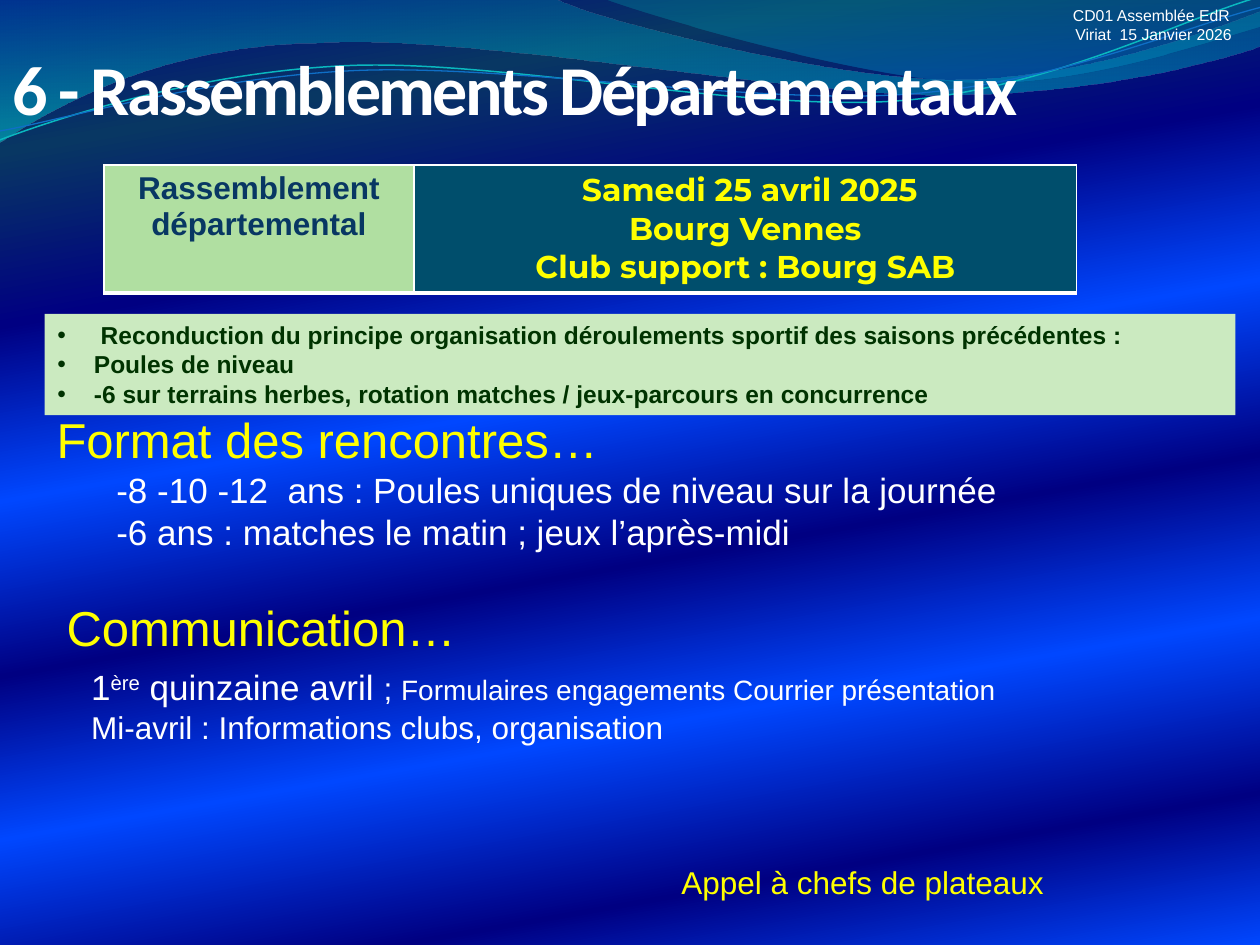
import math

import pptx
import pptx.util
import pptx.dml.color
import pptx.enum.text
import pptx.oxml.ns
import lxml.etree

Pt = pptx.util.Pt
RGB = pptx.dml.color.RGBColor.from_string
qn = pptx.oxml.ns.qn
ALIGN = pptx.enum.text.PP_ALIGN
ANCHOR = pptx.enum.text.MSO_ANCHOR

THEME = {
    "font": "Arial", "title_font": "Calibri", "event_font": "Montserrat",
    "white": "FFFFFF", "yellow": "FFFF00", "navy": "083763", "forest": "003300",
    "label_fill": "B0DFA1", "event_fill": "004E6C", "list_fill": "CBEAC0",
    "teal": "0AB8BF", "blue": "0F6FC6",
    "title": 40, "heading": 28, "body": 20, "detail": 18, "small": 16, "list": 14, "note": 9,
    "background": [(0, "000082", 100), (13, "083763", 100), (28, "000082", 100),
                   (43, "0047FF", 100), (58, "000082", 100), (72, "0047FF", 100),
                   (87, "000082", 100), (100, "0047FF", 100)],
    "wide_wave": [(0, "0074A1", 45), (100, "00C6CF", 55)],
    "right_wave": [(0, "00A1A9", 30), (80, "008BBF", 45)],
}


def paint_gradient(fill, holder, stops, angle):
    """Fill with (position %, colour, opacity %) stops, the angle turning clockwise."""
    fill.gradient()
    gradient = next(holder.iter(qn("a:gradFill")))
    stop_list = gradient.find(qn("a:gsLst"))
    for old_stop in list(stop_list):
        stop_list.remove(old_stop)
    for position, color, opacity in stops:
        stop = lxml.etree.SubElement(stop_list, qn("a:gs"), pos=str(position * 1000))
        value = lxml.etree.SubElement(stop, qn("a:srgbClr"), val=color)
        if opacity < 100:
            lxml.etree.SubElement(value, qn("a:alpha"), val=str(opacity * 1000))
    gradient.find(qn("a:lin")).set("ang", str(angle * 60000))


def write(frame, paragraphs, size, color, font="font", bold=False, align=ALIGN.LEFT):
    """Write paragraphs, each a list of (text, theme size or None, baseline %) runs or one string."""
    frame.word_wrap = True
    for number, runs in enumerate(paragraphs):
        paragraph = frame.add_paragraph() if number else frame.paragraphs[0]
        paragraph.alignment = align
        paragraph.space_before = Pt(0)
        if isinstance(runs, str):
            runs = [(runs, None, 0)]
        for text, run_size, baseline in runs:
            run = paragraph.add_run()
            run.text = text
            run.font.name = THEME[font]
            run.font.size = Pt(THEME[run_size or size])
            run.font.bold = bold
            run.font.color.rgb = RGB(THEME[color])
            if baseline:
                run.font._element.set("baseline", str(baseline * 1000))


presentation = pptx.Presentation()
presentation.slide_width = pptx.util.Inches(10)
presentation.slide_height = pptx.util.Inches(7.5)
column = presentation.slide_width // 100
row = presentation.slide_height // 75
slide = presentation.slides.add_slide(presentation.slide_layouts[1])
shapes = slide.shapes
paint_gradient(slide.background.fill, slide._element, THEME["background"], 80)

# Waves: start point, straight (x, y) or cubic (x1, y1, x2, y2, x, y) segments,
# gradient, line colour and width, tilt in degrees with its centre
waves = [
    ((0, -0.1), [(44, -0.1), (47.6, 1.7, 66.4, 6.3, 75.8, 6.3), (85.3, 6.3, 95.8, 2.6, 100, 0.9),
                 (100.1, 3.6), (98.3, 4.4, 87, 7.6, 74.6, 7.5), (62.2, 7.5, 38.2, 2.8, 25.7, 3.4),
                 (12.9, 3.5, 4.6, 8.3, -0.1, 11.3)], "wide_wave", None, 0, (0, 0)),
    ((47.9, -0.1), [(50.9, 1.1, 68.2, 6.2, 76.9, 6.5), (85.6, 6.9, 96.1, 3.2, 100, 2.1),
                    (100, 0)], "right_wave", None, 0, (0, 0)),
    ((0, 11.1), [(4.8, 9.3, 15.8, 5.7, 27.7, 5.2), (39.5, 4.7, 59.3, 8.9, 71.3, 8),
                 (83.3, 7.1, 93.8, 1.5, 99.8, -0.2)], None, ("teal", 0.85), -2.7, (49.9, 5.75)),
    ((0, 10.4), [(4.7, 9.6, 16.4, 6.1, 28.3, 5.6), (40.3, 5.1, 59.7, 8.3, 71.7, 7.5),
                 (83.6, 6.7, 94.1, 2.1, 100, 0.6)], None, ("blue", 0.75), -2.7, (50, 5.9)),
]
for start, segments, stops, line, tilt, (center_x, center_y) in waves:
    points = [start]
    for segment in segments:
        points += zip(segment[::2], segment[1::2])
    cosine, sine = math.cos(math.radians(-tilt)), math.sin(math.radians(-tilt))
    outline = []
    for x, y in points:
        across, down = x - center_x, y - center_y
        outline.append((round((center_x + across * cosine - down * sine) * column),
                        round((center_y + across * sine + down * cosine) * row)))
    builder = shapes.build_freeform(*outline[0], scale=1.0)
    builder.add_line_segments(outline[1:], close=stops is not None)
    wave = builder.convert_to_shape()
    # Join each three control points into one curve
    straight = iter(list(wave._element.iter(qn("a:lnTo"))))
    for segment in segments:
        step = next(straight)
        if len(segment) == 6:
            step.tag = qn("a:cubicBezTo")
            for _ in range(2):
                other = next(straight)
                step.append(other[0])
                other.getparent().remove(other)
    wave.rotation = tilt
    wave.shadow.inherit = False
    if stops:
        paint_gradient(wave.fill, wave._element, THEME[stops], 90)
        wave.line.fill.background()
    else:
        wave.fill.background()
        wave.line.color.rgb = RGB(THEME[line[0]])
        wave.line.width = Pt(line[1])

# Title and list stand in front of the waves
title, principles = shapes.title, slide.placeholders[1]
for placeholder, (left, top, width, height), anchor in (
        (title, (0, 2.1, 85, 8.7), ANCHOR.BOTTOM),
        (principles, (3.55, 24.9, 94.5, 8.05), ANCHOR.TOP)):
    shapes._spTree.append(placeholder._element)
    placeholder.left, placeholder.width = round(left * column), round(width * column)
    placeholder.top, placeholder.height = round(top * row), round(height * row)
    placeholder.text_frame.auto_size = pptx.enum.text.MSO_AUTO_SIZE.NONE
    placeholder.text_frame.vertical_anchor = anchor

write(title.text_frame, ["6 - Rassemblements Départementaux"], "title", "white", "title_font", True)
title.text_frame.paragraphs[0].runs[0].font._element.set("spc", "-150")

principles.fill.solid()
principles.fill.fore_color.rgb = RGB(THEME["list_fill"])
write(principles.text_frame, [
    " Reconduction du principe organisation déroulements sportif des saisons précédentes :",
    "Poules de niveau",
    "-6 sur terrains herbes, rotation matches / jeux-parcours en concurrence",
], "list", "forest", bold=True)
for paragraph in principles.text_frame.paragraphs:
    properties = paragraph._p.get_or_add_pPr()
    properties.set("marL", str(round(2.9 * column)))
    properties.set("indent", str(round(-2.9 * column)))

# Event table
event_widths = [24.6, 52.6]
frame = shapes.add_table(1, 2, round(8.25 * column), round(13.1 * row),
                         round(sum(event_widths) * column), round(4.1 * row))
table = frame.table
event_cells = [
    (["Rassemblement départemental"], "navy", "font", "label_fill"),
    ([" Samedi 25 avril 2025", "Bourg Vennes", "Club support : Bourg SAB"],
     "yellow", "event_font", "event_fill"),
]
for index, (lines, color, font, fill) in enumerate(event_cells):
    table.columns[index].width = round(event_widths[index] * column)
    cell = table.cell(0, index)
    write(cell.text_frame, lines, "detail", color, font, True, ALIGN.CENTER)
    properties = cell._tc.get_or_add_tcPr()
    for side, points in (("L", 1), ("R", 1), ("T", 1), ("B", 3)):
        border = lxml.etree.SubElement(properties, qn("a:ln" + side), w=str(Pt(points)))
        border_fill = lxml.etree.SubElement(border, qn("a:solidFill"))
        lxml.etree.SubElement(border_fill, qn("a:srgbClr"), val=THEME["white"])
    cell.fill.solid()
    cell.fill.fore_color.rgb = RGB(THEME[fill])

# Text boxes: left, top, width, height, paragraphs, size, colour, alignment
text_boxes = [
    (6.25, 52.35, 88.6, 8.4, [
        [("1", None, 0), ("ère", None, 30), (" quinzaine avril ", None, 0), ("; ", "detail", 0),
         ("Formulaires engagements Courrier présentation", "small", 0)],
        [("Mi-avril : Informations clubs, organisation", "detail", 0)],
    ], "body", "white", ALIGN.LEFT),
    (4.3, 46.9, 38.6, 5.7, ["Communication…"], "heading", "yellow", ALIGN.LEFT),
    (53.1, 68, 40.9, 4, ["Appel à chefs de plateaux"], "detail", "yellow", ALIGN.LEFT),
    (3.5, 32, 63.8, 5.7, ["Format des rencontres…"], "heading", "yellow", ALIGN.LEFT),
    (8.25, 36.7, 74, 7.7, ["-8 -10 -12  ans : Poules uniques de niveau sur la journée",
                           "-6 ans : matches le matin ; jeux l’après-midi"],
     "body", "white", ALIGN.LEFT),
    (83.1, 0, 16.9, 5.6, ["CD01 Assemblée EdR ", "Viriat  15 Janvier 2026"],
     "note", "white", ALIGN.CENTER),
]
for left, top, width, height, paragraphs, size, color, align in text_boxes:
    box = shapes.add_textbox(round(left * column), round(top * row),
                             round(width * column), round(height * row))
    write(box.text_frame, paragraphs, size, color, align=align)

presentation.save("out.pptx")
